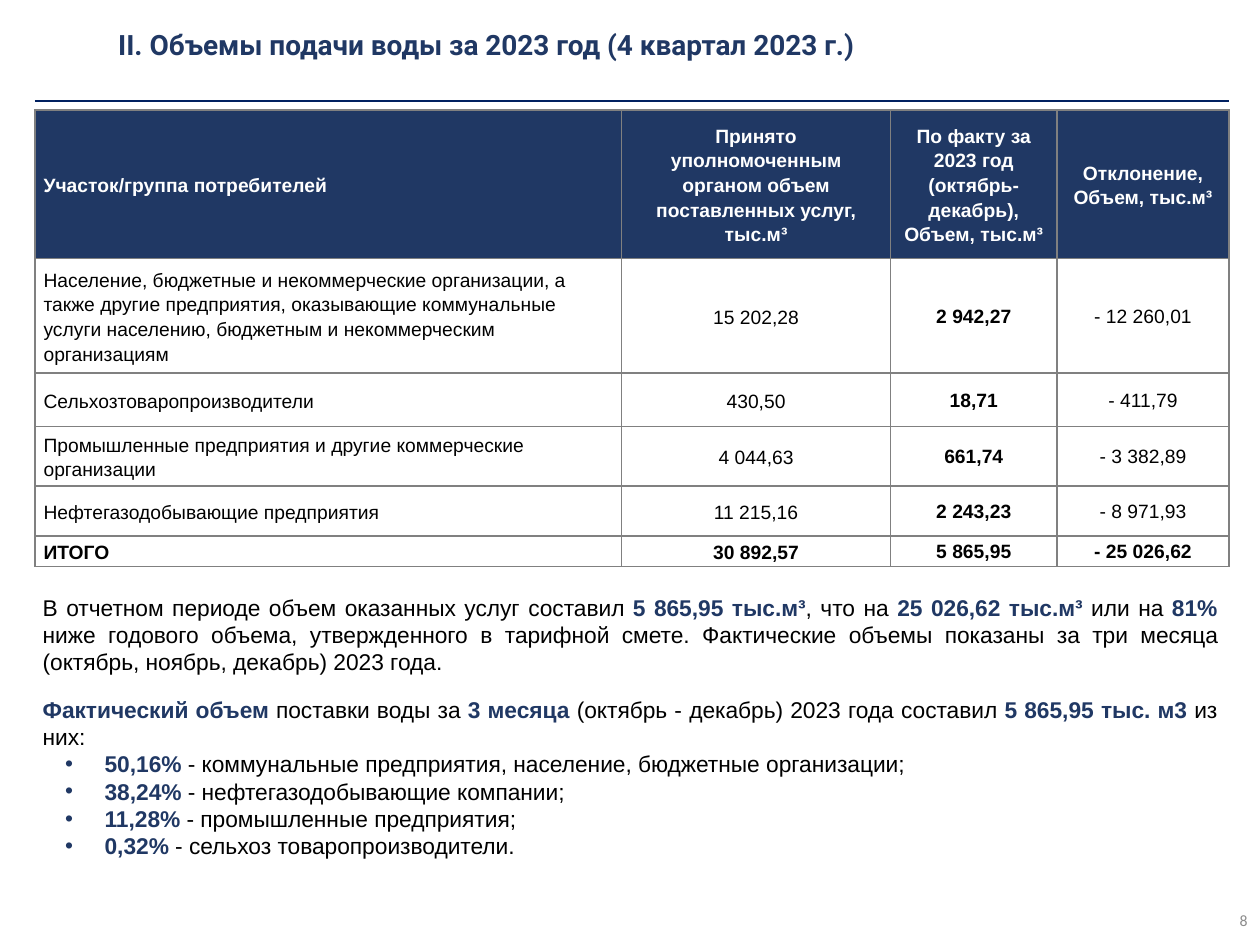
from lxml import etree
from pptx import Presentation
from pptx.dml.color import RGBColor
from pptx.enum import shapes, text
from pptx.oxml.ns import qn
from pptx.util import Pt

THEME = {
    "navy": RGBColor.from_string("203864"),
    "rule": RGBColor.from_string("002060"),
    "black": RGBColor.from_string("000000"),
    "white": RGBColor.from_string("FFFFFF"),
    "grey": RGBColor.from_string("8C8C8C"),
    "border": "808080",
    "title": Pt(16),
    "body": Pt(13),
    "table": Pt(11),
    "number": Pt(9),
}
LEFT, CENTER, RIGHT, JUSTIFY = (
    text.PP_ALIGN.LEFT, text.PP_ALIGN.CENTER, text.PP_ALIGN.RIGHT, text.PP_ALIGN.JUSTIFY
)
MIDDLE = text.MSO_ANCHOR.MIDDLE


def add_span(para, wording, color, **formats):
    span = para.add_run()
    span.text = wording
    span.font.color.rgb = THEME[color]
    for name, value in formats.items():
        setattr(span.font, name, value)


def add_box(page, left, top, width, height, anchor):
    box = page.shapes.add_textbox(Pt(left), Pt(top), Pt(width), Pt(height))
    box.text_frame.word_wrap = True
    box.text_frame.vertical_anchor = anchor
    return box.text_frame


deck = Presentation()
deck.slide_width, deck.slide_height = Pt(720), Pt(540)
page = deck.slides.add_slide(deck.slide_layouts[6])

rows = [
    ("Участок/группа потребителей",
     "Принято уполномоченным органом объем поставленных услуг, тыс.м³",
     "По факту за 2023 год (октябрь-декабрь), Объем, тыс.м³",
     "Отклонение, Объем, тыс.м³"),
    ("Население, бюджетные и некоммерческие организации, а также другие предприятия, "
     "оказывающие коммунальные услуги населению, бюджетным и некоммерческим организациям",
     "15 202,28", "2 942,27", "- 12 260,01"),
    ("Сельхозтоваропроизводители", "430,50", "18,71", "- 411,79"),
    ("Промышленные предприятия и другие коммерческие организации",
     "4 044,63", "661,74", "- 3 382,89"),
    ("Нефтегазодобывающие предприятия", "11 215,16", "2 243,23", "- 8 971,93"),
    ("ИТОГО", "30 892,57", "5 865,95", "- 25 026,62"),
]
widths = [335.3, 153.8, 95, 98.5]
heights = [85, 65.4, 30.5, 34, 28.6, 17.5]
frame = page.shapes.add_table(
    len(rows), len(widths), Pt(19.9), Pt(62.8), Pt(sum(widths)), Pt(sum(heights))
)
table = frame.table
table.first_row = table.horz_banding = False
for column, width in zip(table.columns, widths):
    column.width = Pt(width)
for line, height in zip(table.rows, heights):
    line.height = Pt(height)

for r, row in enumerate(rows):
    for c, wording in enumerate(row):
        cell = table.cell(r, c)
        header, total = r == 0, r == len(rows) - 1
        roomy = header or c < 2
        side = Pt(5) if roomy else Pt(0.7)
        formats = {
            "vertical_anchor": MIDDLE,
            "margin_left": side,
            "margin_right": side,
            "margin_top": Pt(0) if roomy else Pt(0.7),
            "margin_bottom": Pt(0),
        }
        for name, value in formats.items():
            setattr(cell, name, value)
        para = cell.text_frame.paragraphs[0]
        para.alignment = LEFT if c == 0 else CENTER
        para.line_spacing = 1.15 if roomy else 1.0
        add_span(para, wording, "white" if header else "black", name="Arial",
                 size=THEME["table"], bold=header or total or c == 2)
        properties = cell._tc.get_or_add_tcPr()
        for edge in ("a:lnL", "a:lnR", "a:lnT", "a:lnB"):
            border = etree.SubElement(properties, qn(edge), w=str(Pt(1)))
            fill = etree.SubElement(border, qn("a:solidFill"))
            etree.SubElement(fill, qn("a:srgbClr"), val=THEME["border"])
        if header:
            cell.fill.solid()
            cell.fill.fore_color.rgb = THEME["navy"]
        else:
            cell.fill.background()

summary = [
    "В отчетном периоде объем оказанных услуг составил *5 865,95 тыс.м³*, что на "
    "*25 026,62 тыс.м³ *или на *81% *ниже годового объема, утвержденного в тарифной смете. "
    "Фактические объемы показаны за три месяца (октябрь, ноябрь, декабрь) 2023 года.",
    "*Фактический объем* поставки воды за *3 месяца *(октябрь - декабрь) 2023 года составил "
    "*5 865,95 тыс. м3 *из них:",
]
shares = [
    "*50,16%* - коммунальные предприятия, население, бюджетные организации;",
    "*38,24%* - нефтегазодобывающие компании;",
    "*11,28%* - промышленные предприятия;",
    "*0,32%* - сельхоз товаропроизводители.",
]
body = add_box(page, 17.3, 335.5, 685.4, 161.3, text.MSO_ANCHOR.TOP)
for i, wording in enumerate(summary + shares):
    para = body.paragraphs[0] if i == 0 else body.add_paragraph()
    para.alignment = JUSTIFY
    if i == 1:
        para.space_before = Pt(11.5)
    if i >= len(summary):
        properties = para._p.get_or_add_pPr()
        properties.set("marL", str(Pt(35.4)))
        properties.set("indent", str(Pt(-22.5)))
        etree.SubElement(properties, qn("a:buFont"), typeface="Arial")
        etree.SubElement(properties, qn("a:buChar"), char="•")
    for k, part in enumerate(wording.split("*")):
        if part:
            strong = k % 2 == 1
            add_span(para, part, "navy" if strong else "black",
                     name="Arial", size=THEME["body"], bold=strong)

number = add_box(page, 558, 511.2, 162, 28.8, MIDDLE).paragraphs[0]
number.alignment = RIGHT
add_span(number, "8", "grey", name="Calibri", size=THEME["number"])

title = add_box(page, 60.5, 10.1, 643, 30.2, MIDDLE).paragraphs[0]
add_span(title, "II. Объемы подачи воды за 2023 год (4 квартал 2023 г.)", "navy",
         name="Roboto", size=THEME["title"], bold=True)

rule = page.shapes.add_connector(
    shapes.MSO_CONNECTOR.STRAIGHT, Pt(19.9), Pt(57.6), Pt(702.2), Pt(57.6)
)
rule.line.color.rgb = THEME["rule"]
rule.line.width = Pt(1)
etree.SubElement(rule._element.spPr, qn("a:effectLst"))

deck.save("out.pptx")
